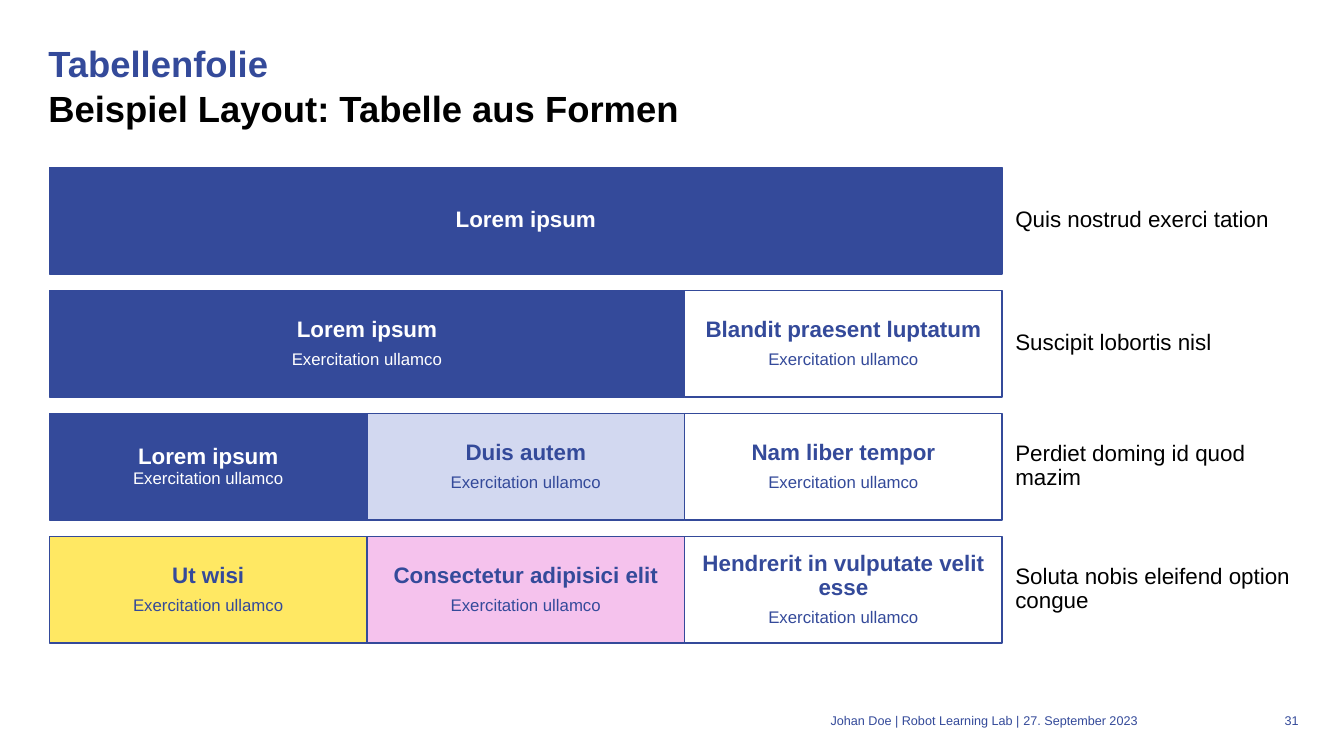
from pptx import Presentation
from pptx.dml.color import RGBColor
from pptx.enum.shapes import MSO_SHAPE as Shape
from pptx.enum.text import MSO_ANCHOR as Anchor, PP_ALIGN as Align
from pptx.util import Inches, Pt

BLUE, PALE, YELLOW, PINK = "344A9A", "D2D8F0", "FFE863", "F5C2ED"
WHITE, BLACK = "FFFFFF", "000000"
SUB = "Exercitation ullamco"
COLS, GAP, HIGH = 3, 0.16, 1.06

# Each row: cells as (span, fill, heading, subline, tight), then its label
ROWS = [
    ([(3, BLUE, "Lorem ipsum", None, False)], "Quis nostrud exerci tation"),
    ([(2, BLUE, "Lorem ipsum", SUB, False),
      (1, WHITE, "Blandit praesent luptatum", SUB, False)],
     "Suscipit lobortis nisl"),
    ([(1, BLUE, "Lorem ipsum", SUB, True),
      (1, PALE, "Duis autem", SUB, False),
      (1, WHITE, "Nam liber tempor", SUB, False)],
     "Perdiet doming id quod mazim"),
    ([(1, YELLOW, "Ut wisi", SUB, False),
      (1, PINK, "Consectetur adipisici elit", SUB, False),
      (1, WHITE, "Hendrerit in vulputate velit esse", SUB, False)],
     "Soluta nobis eleifend option congue"),
]


def color(code):
    return RGBColor.from_string(code)


def write(shape, paras, align=Align.LEFT, anchor=Anchor.TOP, inset=0,
          space=None, after=0):
    """Fill shape with paragraphs, each a list of (text, size, bold, color) lines."""
    frame = shape.text_frame
    frame.word_wrap = True
    frame.vertical_anchor = anchor
    frame.margin_left = frame.margin_right = Inches(inset)
    frame.margin_top = frame.margin_bottom = Inches(inset)
    for i, lines in enumerate(paras):
        para = frame.add_paragraph() if i else frame.paragraphs[0]
        para.alignment = align
        if space:
            para.line_spacing = space
        if i < len(paras) - 1:
            para.space_after = Pt(after)
        for j, (text, size, bold, code) in enumerate(lines):
            if j:
                para.add_line_break()
            run = para.add_run()
            run.text = text
            font = run.font
            font.name, font.size, font.bold = "Arial", Pt(size), bold
            font.color.rgb = color(code)


def add_text(slide, box, paras, **form):
    write(slide.shapes.add_textbox(*map(Inches, box)), paras, **form)


def add_box(slide, box, fill, line, paras, **form):
    shape = slide.shapes.add_shape(Shape.RECTANGLE, *map(Inches, box))
    shape.shadow.inherit = False
    shape.fill.solid()
    shape.fill.fore_color.rgb = color(fill)
    if line:
        shape.line.color.rgb = color(line)
        shape.line.width = Pt(1)
    else:
        shape.line.fill.background()
    write(shape, paras, anchor=Anchor.MIDDLE, inset=0.07, space=0.9, **form)


def add_head(slide, box):
    lines = [("Tabellenfolie", 26, True, BLUE),
             ("Beispiel Layout: Tabelle aus Formen", 26, True, BLACK)]
    add_text(slide, box, [lines], space=Pt(32))


def add_grid(slide, left, top, width):
    unit = width / COLS
    for i, (cells, _) in enumerate(ROWS):
        x, y = left, top + i * (HIGH + GAP)
        for span, fill, head, sub, tight in cells:
            ink = WHITE if fill == BLUE else BLUE
            lines = [(head, 16, True, ink)]
            if sub:
                lines.append((sub, 12, False, ink))
            paras = [lines] if tight else [[line] for line in lines]
            add_box(slide, (x, y, span * unit, HIGH), fill, BLUE, paras,
                    align=Align.CENTER, after=5.6)
            x += span * unit


def add_labels(slide, left, top, width):
    for i, (_, label) in enumerate(ROWS):
        box = (left, top + i * (HIGH + GAP), width, HIGH)
        add_box(slide, box, WHITE, None, [[(label, 16, False, BLACK)]])


def add_foot(slide, left, top, width):
    """Author, date and page number, set from the right edge."""
    right = left + width
    parts = [("Johan Doe | Robot Learning Lab |", left, 6.85, Align.RIGHT),
             ("27. September 2023", right - 2.73, 1.57, Align.LEFT),
             ("31", right - 0.39, 0.39, Align.RIGHT)]
    for text, x, wide, align in parts:
        add_text(slide, (x, top, wide, 0.2), [[(text, 9, False, BLUE)]],
                 align=align)


def main():
    deck = Presentation()
    deck.slide_width, deck.slide_height = Inches(13.33), Inches(7.5)
    slide = deck.slides.add_slide(deck.slide_layouts[6])
    add_head(slide, (0.48, 0.4, 12.4, 1.06))
    add_grid(slide, 0.49, 1.66, 9.45)
    add_labels(slide, 10, 1.66, 2.88)
    add_foot(slide, 3.26, 7.07, 9.62)
    deck.save("out.pptx")


if __name__ == "__main__":
    main()
